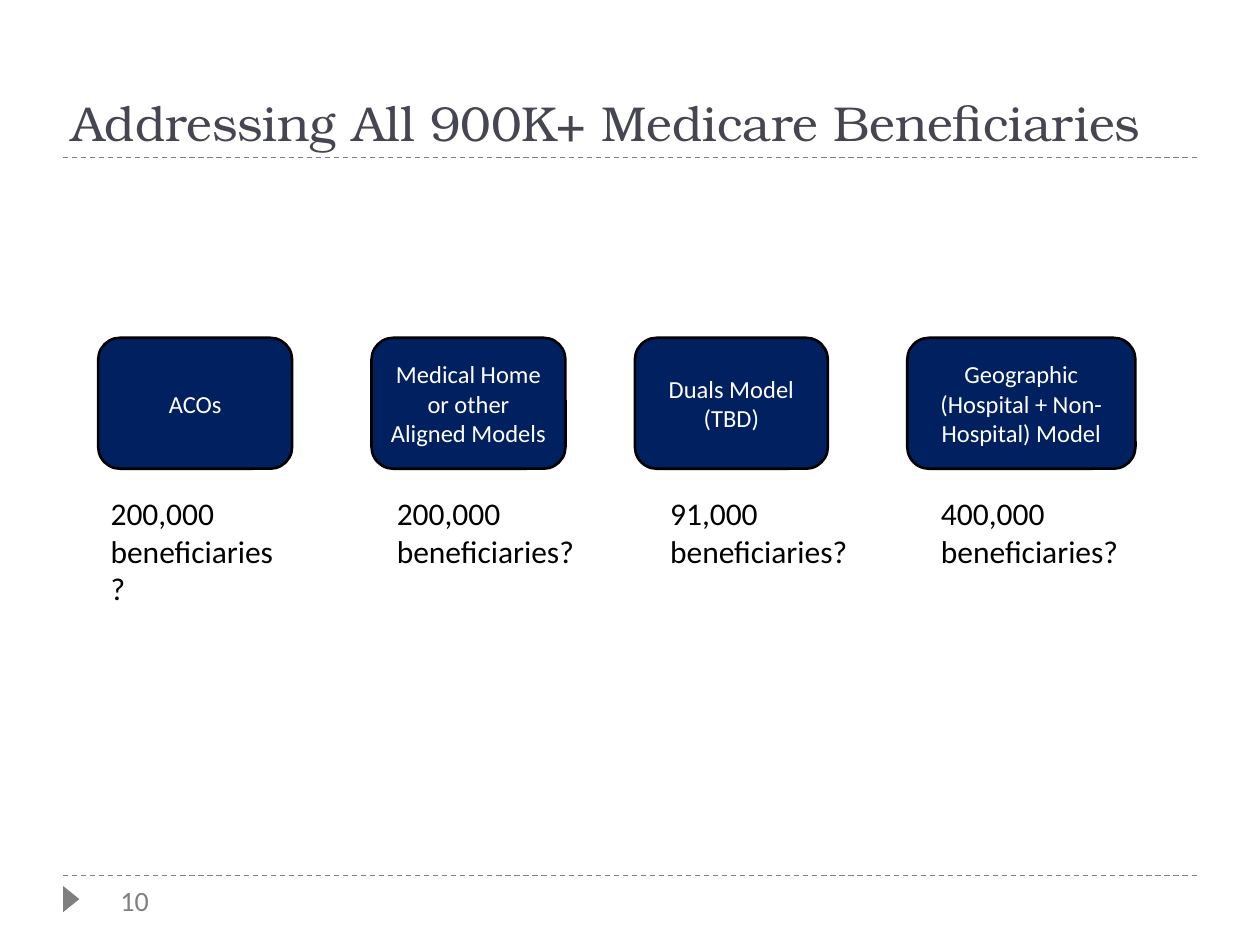
from pptx import Presentation
from pptx.dml.color import RGBColor as Rgb
from pptx.enum.dml import MSO_LINE as Dash
from pptx.enum.shapes import MSO_CONNECTOR as Conn, MSO_SHAPE as Shape
from pptx.enum.text import MSO_ANCHOR as Anchor, MSO_AUTO_SIZE as Auto, PP_ALIGN as Align
from pptx.oxml.ns import qn
from pptx.util import Cm, Pt

INK = {"title": "464653", "rule": "7F7F7F", "page": "808080",
       "box": "002060", "edge": "000000", "body": "000000", "white": "FFFFFF"}
MODELS = [
    ("ACOs", 1.98, 3.91, "200,000 beneficiaries?", 1.98, 3.91),
    ("Medical Home or other Aligned Models", 7.49, 3.91, "200,000\nbeneficiaries?", 7.75, 4.37),
    ("Duals Model (TBD)", 12.8, 3.89, "91,000\nbeneficiaries?", 13.26, 4.37),
    ("Geographic (Hospital + Non-Hospital) Model", 18.29, 4.6,
     "400,000 beneficiaries?", 18.72, 4.67),
]


def color(name):
    """Return the named colour."""
    return Rgb.from_string(INK[name])


def put(item, form):
    """Set each attribute of an item from a dict."""
    for key, value in form.items():
        setattr(item, key, value)


def write(shape, text, size, ink, face="Calibri", align=Align.LEFT, **frame):
    """Fill a shape with formatted text."""
    body = shape.text_frame
    body.text = text
    put(body, {"word_wrap": True, "auto_size": Auto.NONE, **frame})
    for para in body.paragraphs:
        para.alignment = align
        put(para.runs[0].font, {"name": face, "size": Pt(size)})
        para.runs[0].font.color.rgb = color(ink)


def add_title(slide, text):
    """Place the slide title."""
    title = slide.shapes.title
    put(title, {"left": Cm(1.19), "top": Cm(0.43), "width": Cm(22.86), "height": Cm(2.74)})
    write(title, text, 28, "title", "TeX Gyre Bonum", vertical_anchor=Anchor.BOTTOM)


def add_rule(slide, y):
    """Draw a dashed rule across the slide."""
    rule = slide.shapes.add_connector(Conn.STRAIGHT, Cm(1.27), Cm(y), Cm(24.13), Cm(y))
    put(rule.line, {"width": Pt(0.75), "dash_style": Dash.DASH})
    rule.line.color.rgb = color("rule")
    props = rule._element.spPr
    props.append(props.makeelement(qn("a:effectLst"), {}))


def add_shape(slide, kind, place, fill):
    """Draw a filled shape without a shadow."""
    shape = slide.shapes.add_shape(kind, *map(Cm, place))
    shape.shadow.inherit = False
    shape.fill.solid()
    shape.fill.fore_color.rgb = color(fill)
    return shape


def add_box(slide, text, x, width):
    """Draw a rounded box that names a model."""
    box = add_shape(slide, Shape.ROUNDED_RECTANGLE, (x, 6.81, width, 2.64), "box")
    box.line.width = Pt(1.5)
    box.line.color.rgb = color("edge")
    write(box, text, 14, "white", align=Align.CENTER, vertical_anchor=Anchor.MIDDLE)


def add_text(slide, text, place, size, ink, **frame):
    """Add a text box that fits its text."""
    box = slide.shapes.add_textbox(*map(Cm, place))
    write(box, text, size, ink, auto_size=Auto.SHAPE_TO_FIT_TEXT, **frame)


def add_foot(slide, page):
    """Draw the page marker and number."""
    mark = add_shape(slide, Shape.ISOSCELES_TRIANGLE, (1.17, 17.96, 0.53, 0.33), "rule")
    mark.rotation = 90
    mark.line.fill.background()
    add_text(slide, page, (2.18, 17.68, 1.19, 0.94), 16, "page", word_wrap=False)


def main():
    """Build and save the slide."""
    deck = Presentation()
    put(deck, {"slide_width": Cm(25.4), "slide_height": Cm(19.05)})
    slide = deck.slides.add_slide(deck.slide_layouts[5])
    for y in (17.65, 3.18):
        add_rule(slide, y)
    add_foot(slide, "10")
    add_title(slide, "Addressing All 900K+ Medicare Beneficiaries")
    for name, x, width, count, left, span in MODELS:
        add_box(slide, name, x, width)
        add_text(slide, count, (left, 9.83, span, 1.8), 18, "body")
    deck.save("out.pptx")


if __name__ == "__main__":
    main()
